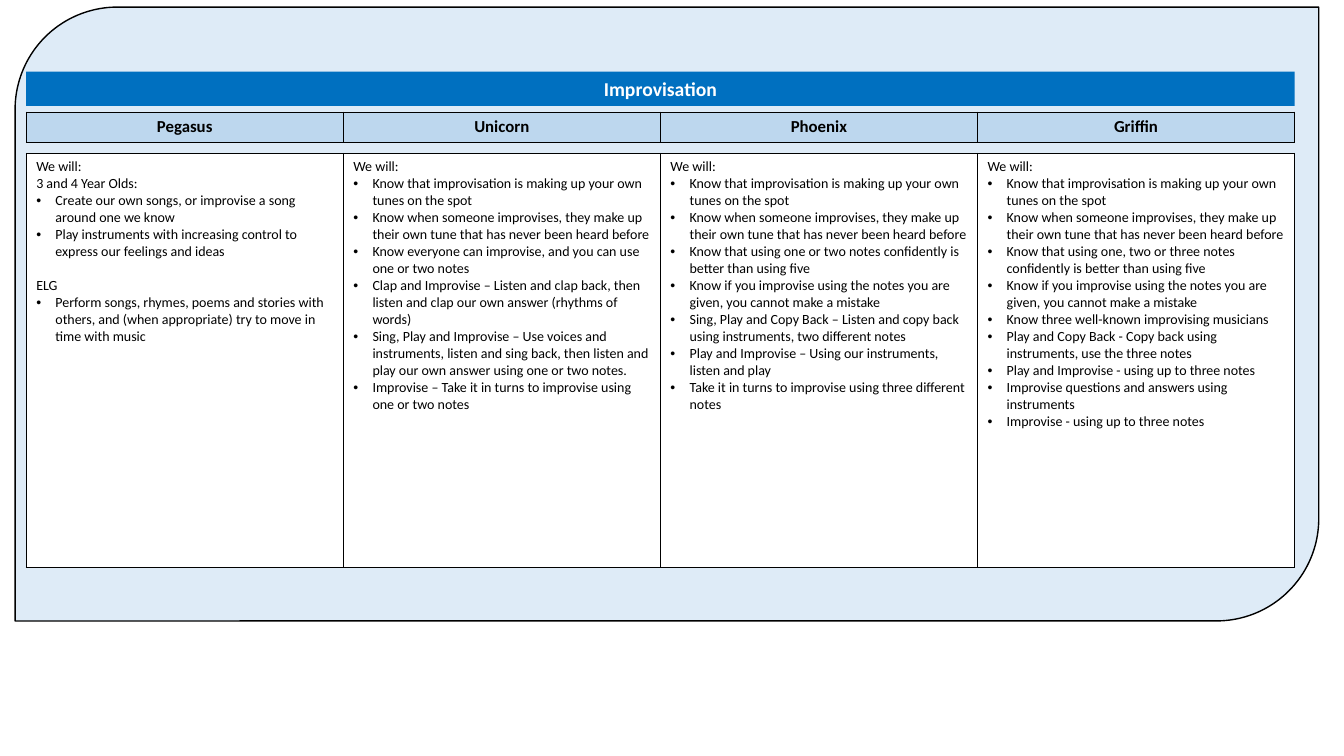
import pptx
import pptx.enum.shapes
import pptx.enum.text
import pptx.oxml
import pptx.oxml.ns
import pptx.util
import pptx.dml.color

COLORS = {
    "panel": "DEEBF7",
    "banner": "0070C0",
    "heading": "BDD7EE",
    "white": "FFFFFF",
    "black": "000000",
}
FORMATS = {
    "title": {"name": "Calibri", "size": pptx.util.Pt(14), "bold": True},
    "heading": {"name": "Calibri", "size": pptx.util.Pt(12), "bold": True},
    "body": {"name": "Calibri", "size": pptx.util.Pt(10), "bold": False},
}
BULLET = "• "
SHARED = [
    "We will:",
    "• Know that improvisation is making up your own tunes on the spot",
    "• Know when someone improvises, they make up their own tune that has never been heard before",
]
GIVEN_NOTES = "• Know if you improvise using the notes you are given, you cannot make a mistake"
CLASSES = {
    "Pegasus": [
        "We will:",
        "3 and 4 Year Olds:",
        "• Create our own songs, or improvise a song around one we know",
        "• Play instruments with increasing control to express our feelings and ideas",
        "ELG",
        "• Perform songs, rhymes, poems and stories with others, and (when appropriate) try to move in time with music",
    ],
    "Unicorn": SHARED + [
        "• Know everyone can improvise, and you can use one or two notes",
        "• Clap and Improvise – Listen and clap back, then listen and clap our own answer (rhythms of words)",
        "• Sing, Play and Improvise – Use voices and instruments, listen and sing back, then listen and play our own answer using one or two notes.",
        "• Improvise – Take it in turns to improvise using one or two notes",
    ],
    "Phoenix": SHARED + [
        "• Know that using one or two notes confidently is better than using five",
        GIVEN_NOTES,
        "• Sing, Play and Copy Back – Listen and copy back using instruments, two different notes",
        "• Play and Improvise – Using our instruments, listen and play",
        "• Take it in turns to improvise using three different notes",
    ],
    "Griffin": SHARED + [
        "• Know that using one, two or three notes confidently is better than using five",
        GIVEN_NOTES,
        "• Know three well-known improvising musicians",
        "• Play and Copy Back - Copy back using instruments, use the three notes",
        "• Play and Improvise - using up to three notes",
        "• Improvise questions and answers using instruments",
        "• Improvise - using up to three notes",
    ],
}


def write_text(paragraph, text, style, color):
    run = paragraph.add_run()
    run.text = text
    for attribute, value in FORMATS[style].items():
        setattr(run.font, attribute, value)
    run.font.color.rgb = pptx.dml.color.RGBColor.from_string(COLORS[color])


def add_row_table(top, height, fill):
    frame = slide.shapes.add_table(1, len(CLASSES), left, top, content_width, height)
    table = frame.table
    table.first_row = False
    table.horz_banding = False
    for cell in table.iter_cells():
        properties = cell._tc.get_or_add_tcPr()
        for side in ("lnL", "lnR", "lnT", "lnB"):
            properties.append(pptx.oxml.parse_xml(
                f'<a:{side} {pptx.oxml.ns.nsdecls("a")} w="6350"><a:solidFill>'
                f'<a:srgbClr val="{COLORS["black"]}"/></a:solidFill></a:{side}>'
            ))
        cell.fill.solid()
        cell.fill.fore_color.rgb = pptx.dml.color.RGBColor.from_string(COLORS[fill])
    return table


presentation = pptx.Presentation()
presentation.slide_width = pptx.util.Inches(13.33)
presentation.slide_height = pptx.util.Inches(7.5)
slide = presentation.slides.add_slide(presentation.slide_layouts[5])
left = pptx.util.Inches(0.26)
column_width = pptx.util.Inches(12.58) // len(CLASSES)
content_width = column_width * len(CLASSES)

title = slide.shapes.title
placement = {
    "left": left,
    "top": pptx.util.Inches(0.71),
    "width": content_width,
    "height": pptx.util.Inches(0.34),
}
for attribute, value in placement.items():
    setattr(title, attribute, value)
title.fill.solid()
title.fill.fore_color.rgb = pptx.dml.color.RGBColor.from_string(COLORS["banner"])
title.text_frame.auto_size = pptx.enum.text.MSO_AUTO_SIZE.NONE
title.text_frame.vertical_anchor = pptx.enum.text.MSO_ANCHOR.MIDDLE
heading = title.text_frame.paragraphs[0]
heading.alignment = pptx.enum.text.PP_ALIGN.CENTER
write_text(heading, "Improvisation", "title", "white")

panel = slide.shapes.add_shape(
    pptx.enum.shapes.MSO_SHAPE.ROUND_2_DIAG_RECTANGLE,
    pptx.util.Inches(0.15), pptx.util.Inches(0.07),
    pptx.util.Inches(12.93), pptx.util.Inches(6.09),
)
panel.shadow.inherit = False
panel.fill.solid()
panel.fill.fore_color.rgb = pptx.dml.color.RGBColor.from_string(COLORS["panel"])
panel.line.color.rgb = pptx.dml.color.RGBColor.from_string(COLORS["black"])
panel.line.width = pptx.util.Pt(1)
title._element.addprevious(panel._element)

class_table = add_row_table(pptx.util.Inches(1.11), pptx.util.Inches(0.3), "heading")
skill_table = add_row_table(pptx.util.Inches(1.52), pptx.util.Inches(4.11), "white")

for column, (class_name, skills) in enumerate(CLASSES.items()):
    paragraph = class_table.cell(0, column).text_frame.paragraphs[0]
    paragraph.alignment = pptx.enum.text.PP_ALIGN.CENTER
    write_text(paragraph, class_name, "heading", "black")

    text_frame = skill_table.cell(0, column).text_frame
    for index, skill in enumerate(skills):
        paragraph = text_frame.add_paragraph() if index else text_frame.paragraphs[0]
        write_text(paragraph, skill.removeprefix(BULLET), "body", "black")
        if skill.startswith(BULLET):
            properties = paragraph._p.get_or_add_pPr()
            properties.set("marL", str(pptx.util.Inches(0.19)))
            properties.set("indent", str(-pptx.util.Inches(0.19)))
            for bullet in ('buFont typeface="Arial"', 'buChar char="•"'):
                properties.append(pptx.oxml.parse_xml(
                    f'<a:{bullet} {pptx.oxml.ns.nsdecls("a")}/>'
                ))
        if skill == "ELG":
            paragraph.space_before = pptx.util.Pt(12.2)

presentation.save("out.pptx")
